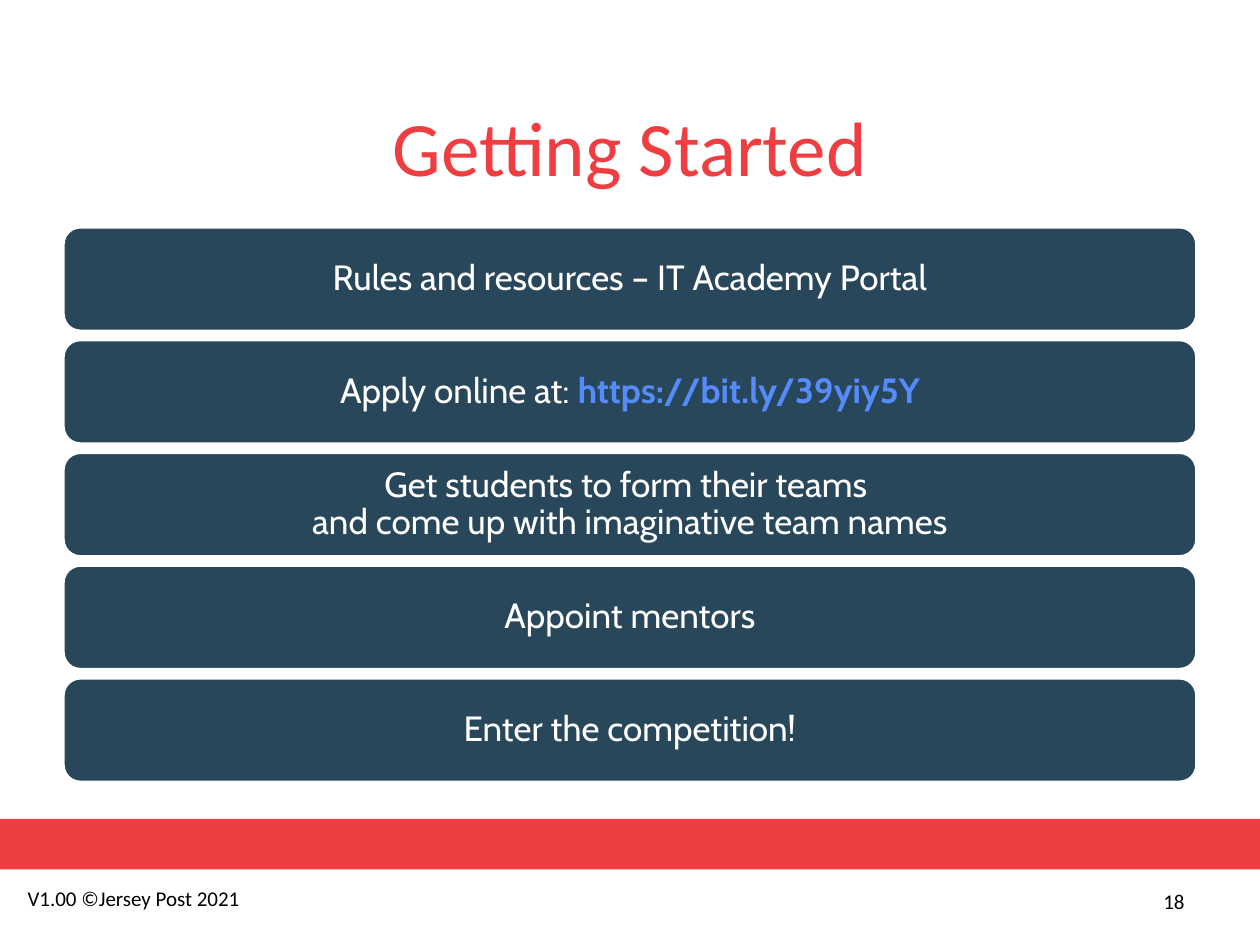
from pptx import Presentation
from pptx.dml.color import RGBColor
from pptx.enum.shapes import MSO_SHAPE as Shape
from pptx.enum.text import MSO_ANCHOR as Anchor, PP_ALIGN as Align
from pptx.util import Inches, Pt

RED = RGBColor(0xEF, 0x3E, 0x42)
NAVY = RGBColor(0x28, 0x47, 0x5A)
BLUE = RGBColor(0x56, 0x8B, 0xFC)
WHITE = RGBColor(0xFF, 0xFF, 0xFF)
BLACK = RGBColor(0, 0, 0)

MARGIN, STEP_TOP, STEP_PITCH, STEP_HEIGHT = 0.5, 1.8, 0.895, 0.83
STEPS = [
    [[("Rules and resources – IT Academy Portal", WHITE, False)]],
    [[("Apply online at: ", WHITE, False), ("https://bit.ly/39yiy5Y", BLUE, True)]],
    [[("Get students to form their teams ", WHITE, False)],
     [("and come up with imaginative team names", WHITE, False)]],
    [[("Appoint mentors", WHITE, False)]],
    [[("Enter the competition!", WHITE, False)]],
]


def add_span(para, text, font, size, color, bold=False):
    """Append one styled run to a paragraph."""
    span = para.add_run()
    span.text = text
    span.font.name, span.font.size, span.font.bold = font, Pt(size), bold
    span.font.color.rgb = color


def add_label(page, area, text, size, color, align=Align.LEFT, anchor=Anchor.TOP, wrap=True):
    """Add a text box holding a single run."""
    box = page.shapes.add_textbox(*map(Inches, area))
    box.text_frame.word_wrap = wrap
    box.text_frame.vertical_anchor = anchor
    para = box.text_frame.paragraphs[0]
    para.alignment = align
    add_span(para, text, "Calibri", size, color)


def add_panel(page, kind, area, fill):
    """Add a flat filled shape without outline or shadow."""
    panel = page.shapes.add_shape(kind, *map(Inches, area))
    panel.shadow.inherit = False
    panel.fill.solid()
    panel.fill.fore_color.rgb = fill
    panel.line.fill.background()
    return panel


def add_step(page, row, lines):
    """Add one rounded step with its centred lines on the given row."""
    area = (MARGIN, STEP_TOP + row * STEP_PITCH, 10 - 2 * MARGIN, STEP_HEIGHT)
    panel = add_panel(page, Shape.ROUNDED_RECTANGLE, area, NAVY)
    panel.line.color.rgb = WHITE
    panel.line.width = Pt(2)
    frame = panel.text_frame
    frame.word_wrap = True
    frame.vertical_anchor = Anchor.MIDDLE
    frame.margin_left = frame.margin_right = Inches(0.08)
    frame.margin_top = frame.margin_bottom = Inches(0.08)
    para = frame.paragraphs[0]
    para.alignment = Align.CENTER
    para.line_spacing = 0.9
    for index, spans in enumerate(lines):
        if index:
            para.add_line_break()
        for text, color, bold in spans:
            add_span(para, text, "Cabin", 20, color, bold)


def main():
    """Build and save the slide."""
    deck = Presentation()
    deck.slide_width, deck.slide_height = Inches(10), Inches(7.5)
    page = deck.slides.add_slide(deck.slide_layouts[6])
    add_panel(page, Shape.RECTANGLE, (0, 6.5, 10, 0.4), RED)
    add_label(page, (0.12, 6.98, 1.91, 0.3), "V1.00 ©Jersey Post 2021", 12, BLACK, wrap=False)
    add_label(page, (MARGIN, 0.67, 9, 0.97), "Getting Started", 44, RED, Align.CENTER, Anchor.MIDDLE)
    for row, lines in enumerate(STEPS):
        add_step(page, row, lines)
    add_label(page, (7.17, 6.95, 2.33, 0.4), "18", 12, BLACK, Align.RIGHT, Anchor.MIDDLE)
    deck.save("out.pptx")


if __name__ == "__main__":
    main()
